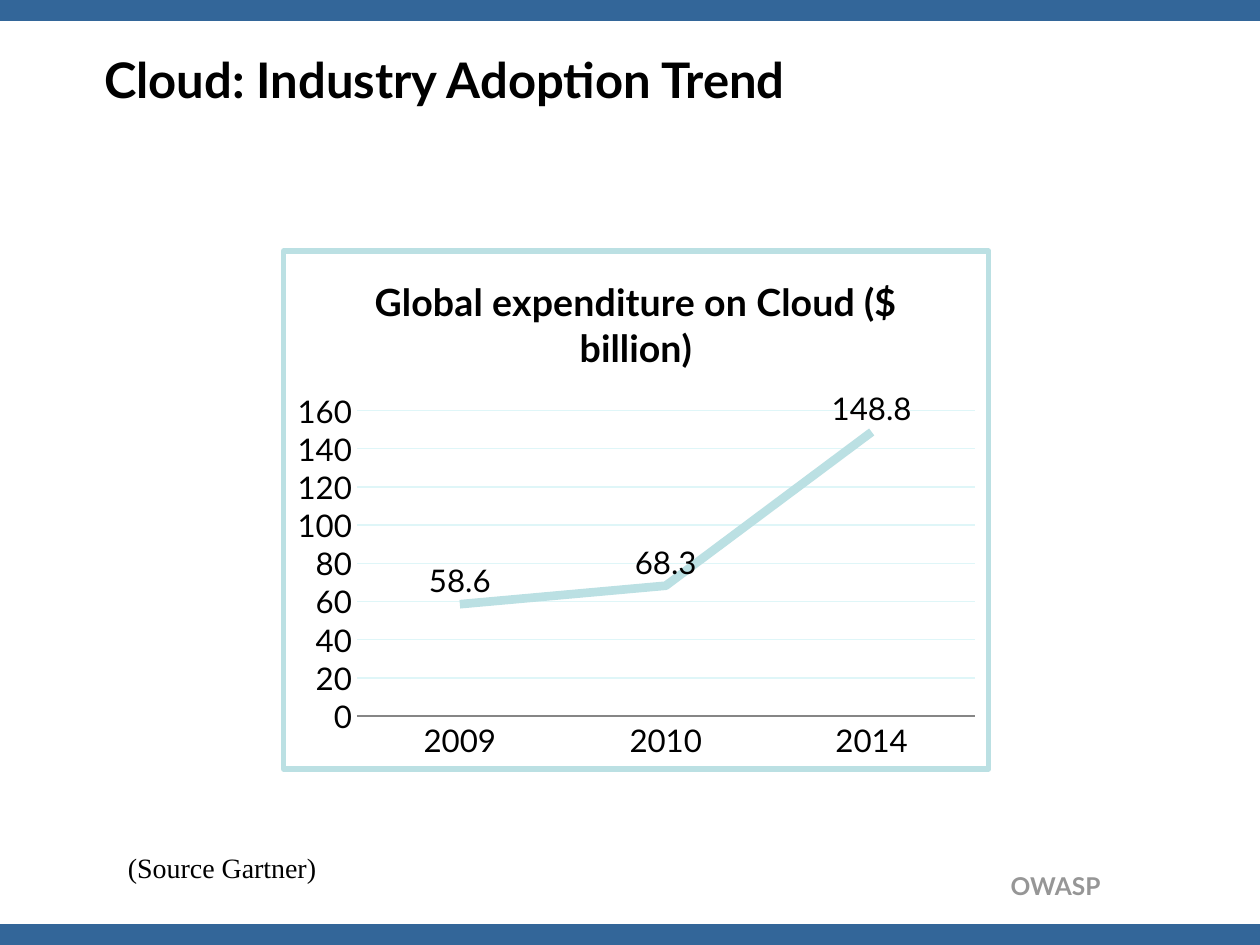
from lxml.etree import SubElement
from pptx import Presentation
from pptx.chart.data import CategoryChartData
from pptx.dml.color import RGBColor
from pptx.enum.chart import XL_CHART_TYPE, XL_LABEL_POSITION, XL_MARKER_STYLE, XL_TICK_MARK
from pptx.enum.shapes import MSO_SHAPE
from pptx.enum.text import MSO_ANCHOR, PP_ALIGN
from pptx.oxml import parse_xml
from pptx.oxml.ns import nsdecls, qn
from pptx.util import Pt

COLORS = {
    "band": "336699",
    "footer": "969696",
    "text": "000000",
    "trend": "BBE0E3",
    "grid": "DFF6F8",
    "axis": "868686",
    "paper": "FFFFFF",
}
SLIDE_WIDTH, SLIDE_HEIGHT = 720, 540
BAND_HEIGHT = 12
SPENDING = {"2009": 58.6, "2010": 68.3, "2014": 148.8}


def color(name):
    return RGBColor.from_string(COLORS[name])


def style_font(font, size, name="Lato", ink="text", bold=False):
    font.size = Pt(size)
    font.name = name
    font.bold = bold
    font.color.rgb = color(ink)


def style_line(line, ink, width):
    line.color.rgb = color(ink)
    line.width = Pt(width)


def add_band(slide, top):
    band = slide.shapes.add_shape(
        MSO_SHAPE.RECTANGLE, Pt(0), Pt(top), Pt(SLIDE_WIDTH), Pt(BAND_HEIGHT))
    band.shadow.inherit = False
    band.fill.solid()
    band.fill.fore_color.rgb = color("band")
    band.line.fill.background()


def add_text(slide, words, box, size, align=PP_ALIGN.LEFT,
             anchor=MSO_ANCHOR.TOP, wrap=True, **font_style):
    frame = slide.shapes.add_textbox(*map(Pt, box)).text_frame
    frame.word_wrap = wrap
    frame.vertical_anchor = anchor
    paragraph = frame.paragraphs[0]
    paragraph.alignment = align
    run = paragraph.add_run()
    run.text = words
    style_font(run.font, size, **font_style)


def add_chart_border(chart, ink, width):
    """Frame the chart area, which has no public line format."""
    area = parse_xml(f'<c:spPr {nsdecls("c", "a")}/>')
    for tag, parent_color in (("a:solidFill", "paper"),):
        fill = SubElement(area, qn(tag))
        SubElement(fill, qn("a:srgbClr"), val=COLORS[parent_color])
    line = SubElement(area, qn("a:ln"), w=str(Pt(width)))
    fill = SubElement(line, qn("a:solidFill"))
    SubElement(fill, qn("a:srgbClr"), val=COLORS[ink])
    SubElement(line, qn("a:round"))
    chart._chartSpace.find(qn("c:chart")).addnext(area)


def style_axes(chart):
    years, dollars = chart.category_axis, chart.value_axis
    for axis in (years, dollars):
        axis.major_tick_mark = XL_TICK_MARK.NONE
        axis.minor_tick_mark = XL_TICK_MARK.NONE
    style_line(years.format.line, "axis", 0.75)
    dollars.format.line.fill.background()
    dollars.minimum_scale, dollars.maximum_scale = 0, 160
    dollars.major_unit = 20
    dollars.has_major_gridlines = True
    style_line(dollars.major_gridlines.format.line, "grid", 0.75)


def add_spending_chart(slide, box):
    data = CategoryChartData()
    data.categories = list(SPENDING)
    data.add_series("Series 1", list(SPENDING.values()))
    chart = slide.shapes.add_chart(
        XL_CHART_TYPE.LINE_STACKED, *map(Pt, box), data).chart
    style_font(chart.font, 18)
    chart.has_legend = False
    chart.has_title = True
    heading = chart.chart_title.text_frame.paragraphs[0].add_run()
    heading.text = "Global expenditure on Cloud ($ billion)"
    style_font(heading.font, 21.6, bold=True)
    chart.chart_title.include_in_layout = False
    style_axes(chart)

    plot = chart.plots[0]
    plot.vary_by_categories = False
    trend = plot.series[0]
    trend.smooth = False
    trend.marker.style = XL_MARKER_STYLE.NONE
    style_line(trend.format.line, "trend", 5)
    labels = trend.data_labels
    labels.show_value = True
    labels.position = XL_LABEL_POSITION.ABOVE
    style_font(labels.font, 18)
    add_chart_border(chart, "trend", 3)


def main():
    deck = Presentation()
    deck.slide_width, deck.slide_height = Pt(SLIDE_WIDTH), Pt(SLIDE_HEIGHT)
    slide = deck.slides.add_slide(deck.slide_layouts[6])
    for top in (0, SLIDE_HEIGHT - BAND_HEIGHT):
        add_band(slide, top)
    add_text(slide, "OWASP", (448, 494, 188, 24), 14,
             align=PP_ALIGN.RIGHT, ink="footer", bold=True)
    add_text(slide, "Cloud: Industry Adoption Trend", (52.5, 12, 614, 66), 28,
             anchor=MSO_ANCHOR.MIDDLE, bold=True)
    add_spending_chart(slide, (160.5, 142, 406, 299))
    add_text(slide, "(Source Gartner)", (66, 482.5, 136, 24.5), 16,
             wrap=False, name="Times New Roman")
    deck.save("out.pptx")


if __name__ == "__main__":
    main()
